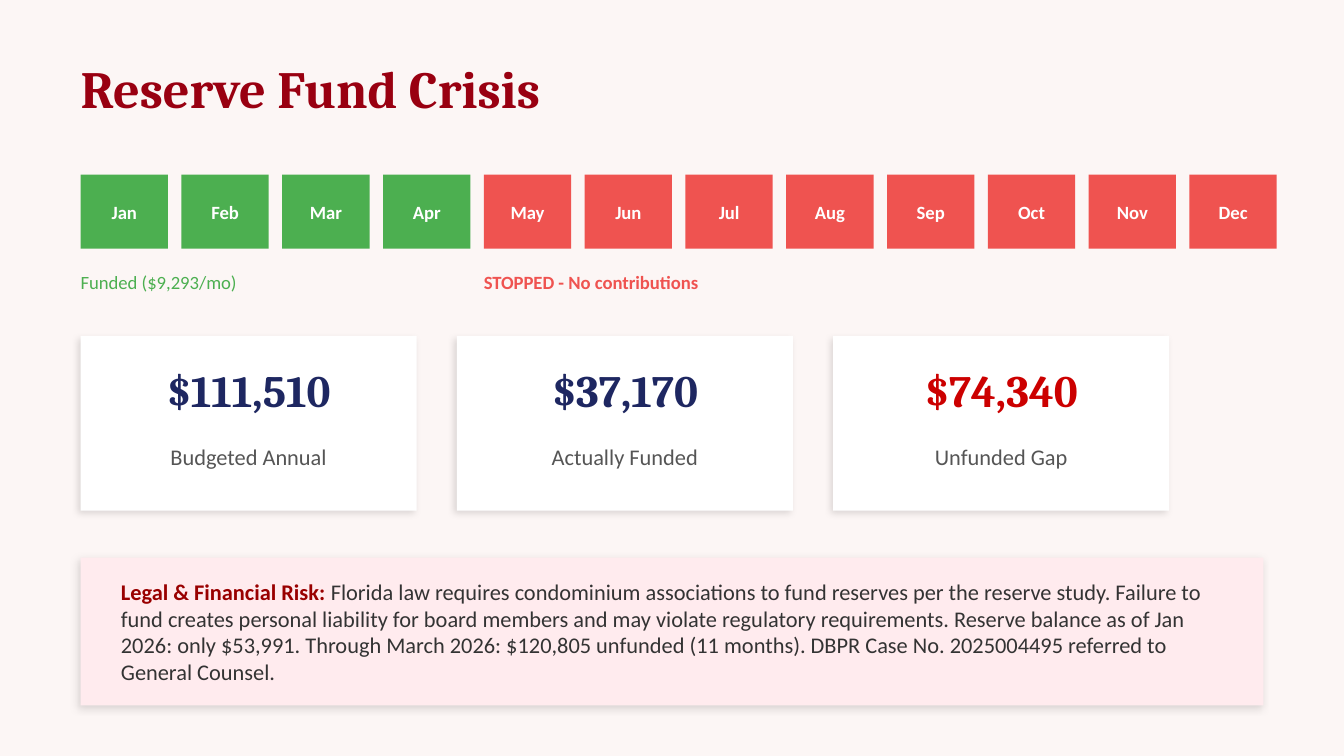
from lxml import etree
from pptx import Presentation
from pptx.dml.color import RGBColor
from pptx.enum.shapes import MSO_SHAPE
from pptx.enum.text import MSO_ANCHOR, PP_ALIGN
from pptx.oxml.ns import qn
from pptx.util import Inches, Pt

COLORS = {
    "background": "FCF6F5", "title": "990011", "funded": "4CAF50",
    "stopped": "EF5350", "white": "FFFFFF", "navy": "1E2761",
    "gap": "CC0000", "label": "555555", "risk_fill": "FFEBEE",
    "risk_heading": "990000", "body": "333333",
}
HEADING_FONT, BODY_FONT = "Cambria", "Calibri"
MONTHS = "Jan Feb Mar Apr May Jun Jul Aug Sep Oct Nov Dec".split()
FUNDED_MONTHS = 4
AMOUNTS = [
    ("$111,510", "Budgeted Annual", "navy"),
    ("$37,170", "Actually Funded", "navy"),
    ("$74,340", "Unfunded Gap", "gap"),
]
RISK_HEADING = "Legal & Financial Risk: "
RISK_TEXT = (
    "Florida law requires condominium associations to fund reserves per the "
    "reserve study. Failure to fund creates personal liability for board "
    "members and may violate regulatory requirements. Reserve balance as of "
    "Jan 2026: only $53,991. Through March 2026: $120,805 unfunded "
    "(11 months). DBPR Case No. 2025004495 referred to General Counsel."
)


def rgb(name):
    return RGBColor.from_string(COLORS[name])


def add_text(slide, left, top, width, height, runs, size,
             font=BODY_FONT, align=PP_ALIGN.LEFT):
    """Add a text box with one paragraph of (text, color, bold) runs."""
    box = slide.shapes.add_textbox(
        Inches(left), Inches(top), Inches(width), Inches(height))
    frame = box.text_frame
    frame.word_wrap = True
    frame.vertical_anchor = MSO_ANCHOR.MIDDLE
    frame.margin_left = frame.margin_right = 0
    frame.margin_top = frame.margin_bottom = 0
    paragraph = frame.paragraphs[0]
    paragraph.alignment = align
    for text, color, bold in runs:
        run = paragraph.add_run()
        run.text = text
        run.font.name = font
        run.font.size = Pt(size)
        run.font.bold = bold
        run.font.color.rgb = rgb(color)


def add_block(slide, left, top, width, height, color):
    block = slide.shapes.add_shape(
        MSO_SHAPE.RECTANGLE,
        Inches(left), Inches(top), Inches(width), Inches(height))
    block.shadow.inherit = False
    block.fill.solid()
    block.fill.fore_color.rgb = rgb(color)
    block.line.fill.background()
    return block


def add_soft_shadow(block):
    effects = block.element.spPr.find(qn("a:effectLst"))
    shadow = etree.SubElement(
        effects, qn("a:outerShdw"), blurRad=str(Pt(4)), dist=str(Pt(2)),
        dir=str(135 * 60000), algn="bl", rotWithShape="0")
    shade = etree.SubElement(shadow, qn("a:srgbClr"), val="000000")
    etree.SubElement(shade, qn("a:alpha"), val="12000")


def add_timeline(slide, left, top):
    width, height, pitch = 0.65, 0.55, 0.75
    for index, month in enumerate(MONTHS):
        color = "funded" if index < FUNDED_MONTHS else "stopped"
        box = (left + index * pitch, top, width, height)
        add_block(slide, *box, color)
        add_text(slide, *box, [(month, "white", True)], 10,
                 align=PP_ALIGN.CENTER)
    caption_top = top + height + 0.1
    add_text(slide, left, caption_top, 3, 0.3,
             [("Funded ($9,293/mo)", "funded", False)], 10)
    add_text(slide, left + FUNDED_MONTHS * pitch, caption_top, 6, 0.3,
             [("STOPPED - No contributions", "stopped", True)], 10)


def add_amount_card(slide, left, top, width, height, amount, label, color):
    add_soft_shadow(add_block(slide, left, top, width, height, "white"))
    add_text(slide, left, top + 0.1, width, 0.6, [(amount, color, True)], 24,
             font=HEADING_FONT, align=PP_ALIGN.CENTER)
    add_text(slide, left, top + 0.7, width, 0.4, [(label, "label", False)], 12,
             align=PP_ALIGN.CENTER)


def add_amount_cards(slide, left, top):
    width, height, gap = 2.5, 1.3, 0.3
    for index, amount in enumerate(AMOUNTS):
        add_amount_card(slide, left + index * (width + gap), top,
                        width, height, *amount)


def add_risk_panel(slide, left, top, width, height):
    add_soft_shadow(add_block(slide, left, top, width, height, "risk_fill"))
    add_text(slide, left + 0.3, top + 0.1, width - 0.6, height - 0.2,
             [(RISK_HEADING, "risk_heading", True),
              (RISK_TEXT, "body", False)], 12)


def main():
    presentation = Presentation()
    presentation.slide_width = Inches(10)
    presentation.slide_height = Inches(10 * 9 / 16)
    slide = presentation.slides.add_slide(presentation.slide_layouts[6])
    slide.background.fill.solid()
    slide.background.fill.fore_color.rgb = rgb("background")

    margin, content_width = 0.6, 8.8
    add_text(slide, margin, 0.3, content_width, 0.7,
             [("Reserve Fund Crisis", "title", True)], 28, font=HEADING_FONT)
    add_timeline(slide, margin, 1.3)
    add_amount_cards(slide, margin, 2.5)
    add_risk_panel(slide, margin, 4.15, content_width, 1.1)
    presentation.save("out.pptx")


if __name__ == "__main__":
    main()
